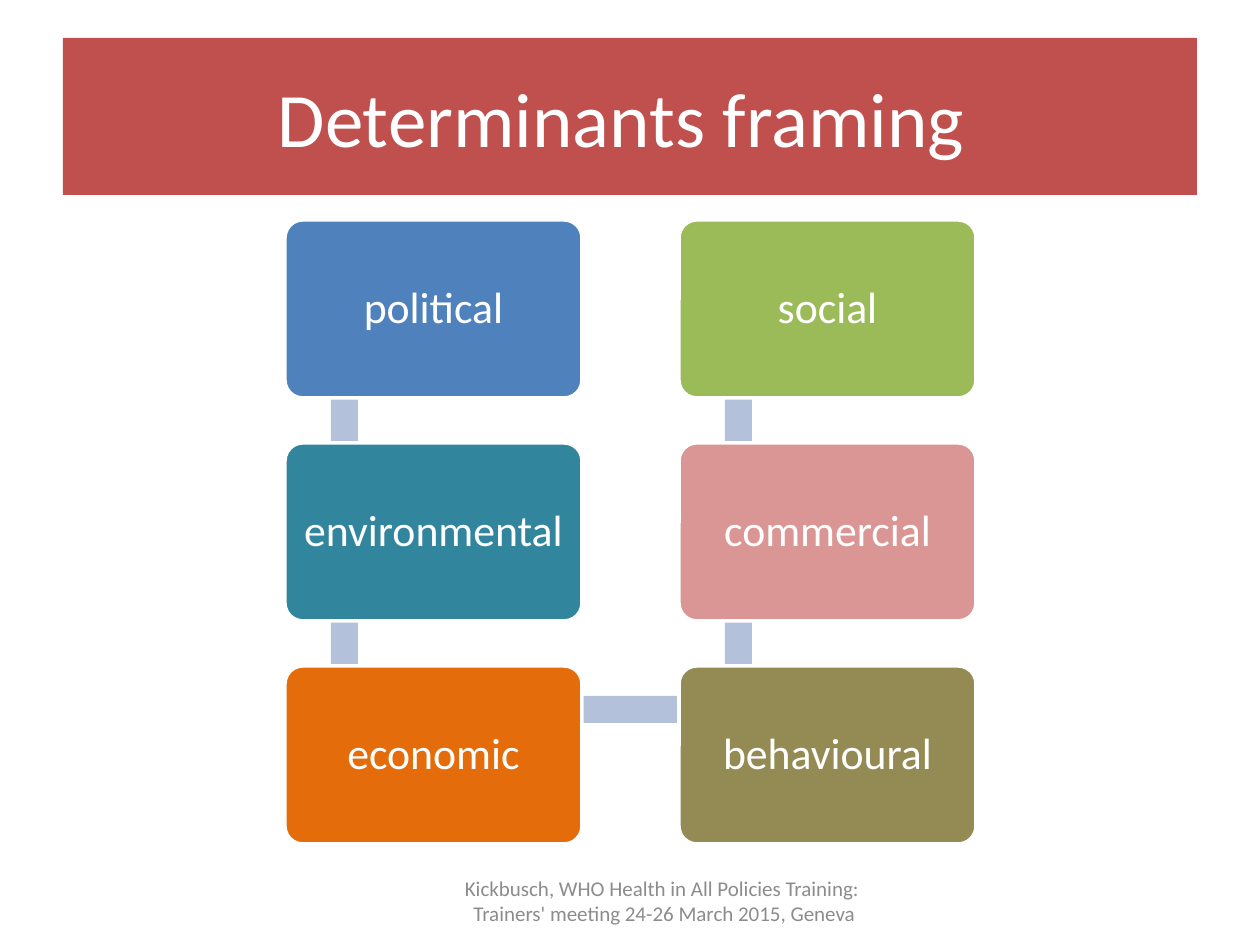
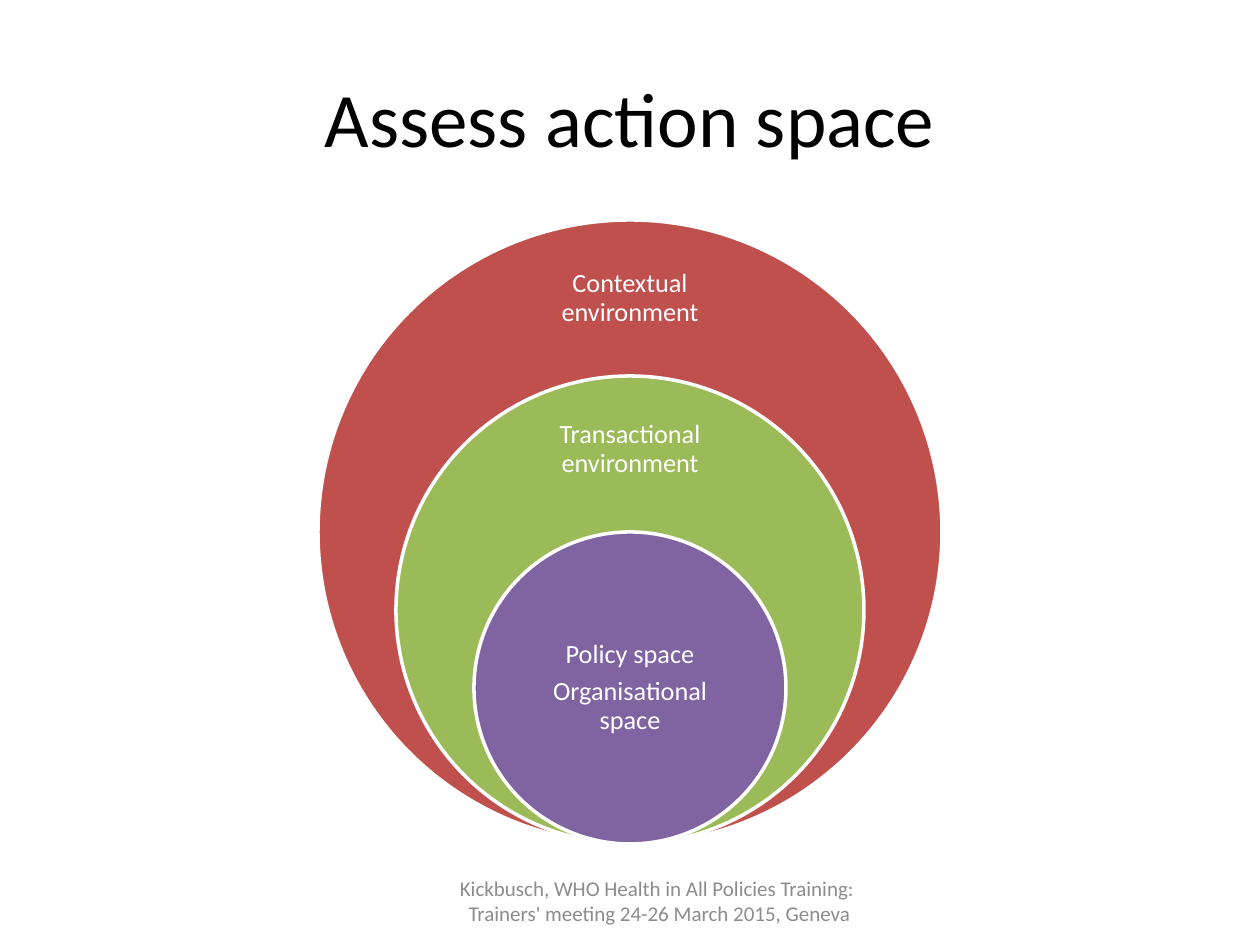
import pptx
import pptx.util
import pptx.dml.color
import pptx.enum.shapes
import pptx.enum.text

SCALE = 914400 / 126
SHAPE = pptx.enum.shapes.MSO_SHAPE
COLORS = {
    "white": "FFFFFF", "black": "000000", "grey": "8C8C8C", "bar": "B3C1DB",
    "red": "C0504D", "blue": "4F81BD", "green": "9BBB59", "teal": "31859C",
    "orange": "E46C0A", "olive": "948A54", "pink": "D99694", "purple": "8064A2",
}
FOOTER = ["Kickbusch, WHO Health in All Policies Training: ",
          "Trainers' meeting 24-26 March 2015, Geneva"]


def add_box(s, kind, box, fill=None, line=None):
    sp = s.shapes.add_shape(kind, *[round(v * SCALE) for v in box])
    sp.shadow.inherit = False
    if fill:
        sp.fill.solid()
        sp.fill.fore_color.rgb = pptx.dml.color.RGBColor.from_string(COLORS[fill])
    else:
        sp.fill.background()
    if line:
        sp.line.color.rgb = pptx.dml.color.RGBColor.from_string(COLORS[line])
        sp.line.width = pptx.util.Pt(2)
    else:
        sp.line.fill.background()
    return sp


def set_text(sp, lines, size, color="white", inset=(12, 6), spacing=1.0, after=0):
    tf = sp.text_frame
    tf.word_wrap = True
    tf.vertical_anchor = pptx.enum.text.MSO_ANCHOR.MIDDLE
    tf.margin_left = tf.margin_right = round(inset[0] * SCALE)
    tf.margin_top = tf.margin_bottom = round(inset[1] * SCALE)
    for i, text in enumerate(lines):
        p = tf.paragraphs[0] if i == 0 else tf.add_paragraph()
        p.alignment = pptx.enum.text.PP_ALIGN.CENTER
        p.line_spacing = spacing
        p.space_after = pptx.util.Pt(after)
        r = p.add_run()
        r.text = text
        r.font.name = "Calibri"
        r.font.size = pptx.util.Pt(size)
        r.font.color.rgb = pptx.dml.color.RGBColor.from_string(COLORS[color])


prs = pptx.Presentation()
prs.slide_width = round(1260 * SCALE)
prs.slide_height = round(945 * SCALE)

slides = []
for title, color, band, footer_w in [
    ("Determinants framing ", "white", "red", 467),
    ("Assess action space", "black", None, 457),
]:
    s = prs.slides.add_slide(prs.slide_layouts[6])
    sp = add_box(s, SHAPE.RECTANGLE, (63, 38, 1134, 157), band)
    set_text(sp, [title], 44, color)
    sp = add_box(s, SHAPE.RECTANGLE, (431, 876, footer_w, 50))
    set_text(sp, FOOTER, 12, "grey")
    slides.append(s)

s = slides[0]
columns = [
    (285, [("political", "blue"), ("environmental", "teal"), ("economic", "orange")]),
    (679, [("social", "green"), ("commercial", "pink"), ("behavioural", "olive")]),
]
top, pitch, node_w, node_h, bar = 220, 223, 297, 178, 27
add_box(s, SHAPE.RECTANGLE, (345, 696, 393, bar), "bar")
for left, nodes in columns:
    for row in range(len(nodes) - 1):
        add_box(s, SHAPE.RECTANGLE, (left + 46, top + 45 + row * pitch, bar, pitch), "bar")
for left, nodes in columns:
    for row, (name, fill) in enumerate(nodes):
        box = (left, top + row * pitch, node_w, node_h)
        sp = add_box(s, SHAPE.ROUNDED_RECTANGLE, box, fill, "white")
        sp.adjustments[0] = 0.1
        set_text(sp, [name], 25, inset=(10, 10), spacing=0.9)

s = slides[1]
center, bottom, label_w = 630, 844, 220
for diameter, fill, label_top, label_h, lines in [
    (624, "red", 252, 93, ["Contextual environment"]),
    (468, "green", 405, 89, ["Transactional environment"]),
    (312, "purple", 610, 156, ["Policy space", "Organisational space"]),
]:
    box = (center - diameter / 2, bottom - diameter, diameter, diameter)
    add_box(s, SHAPE.OVAL, box, fill, "white")
    sp = add_box(s, SHAPE.RECTANGLE, (center - label_w / 2, label_top, label_w, label_h))
    set_text(sp, lines, 15, inset=(15, 15), spacing=0.9, after=5)

prs.save("out.pptx")
